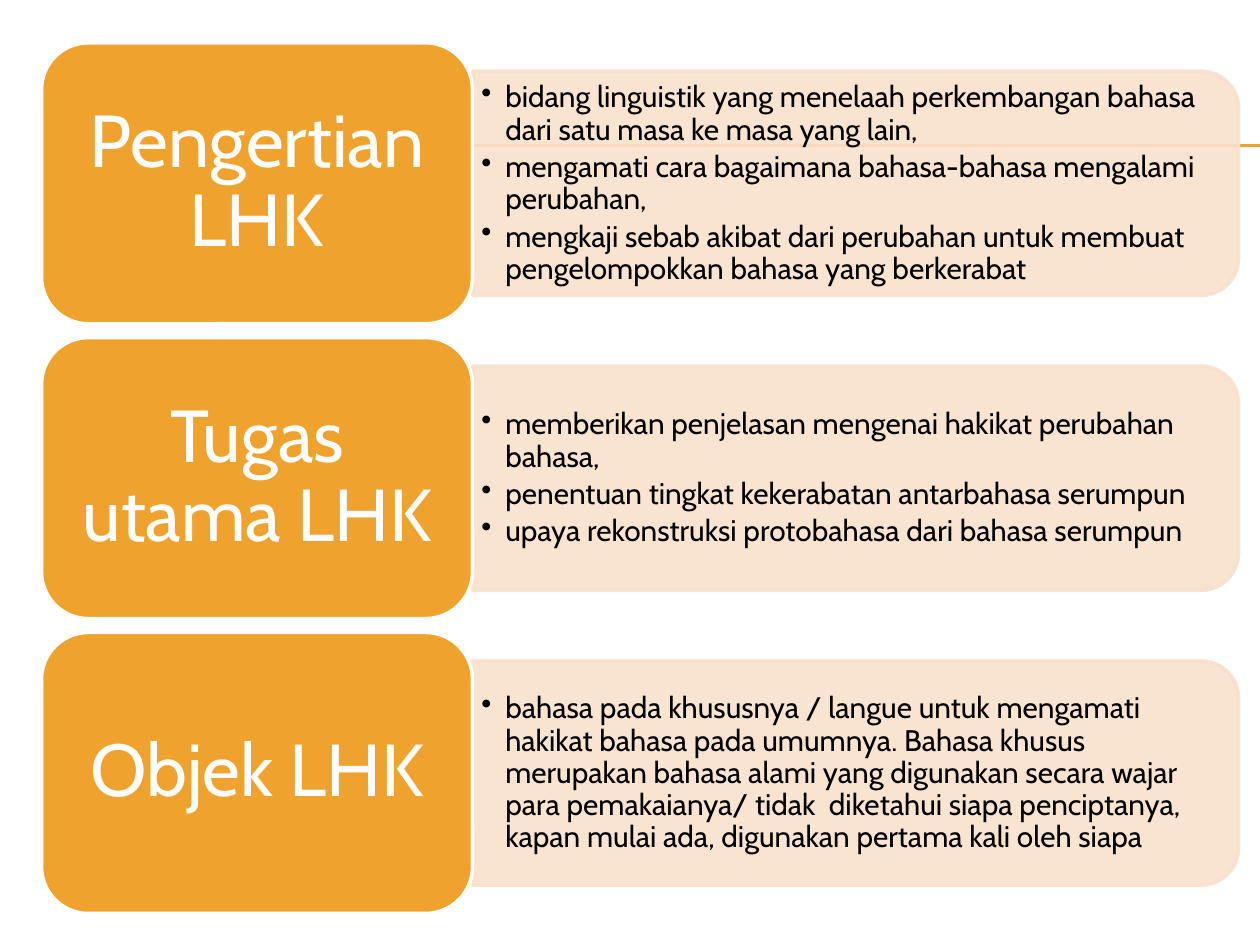
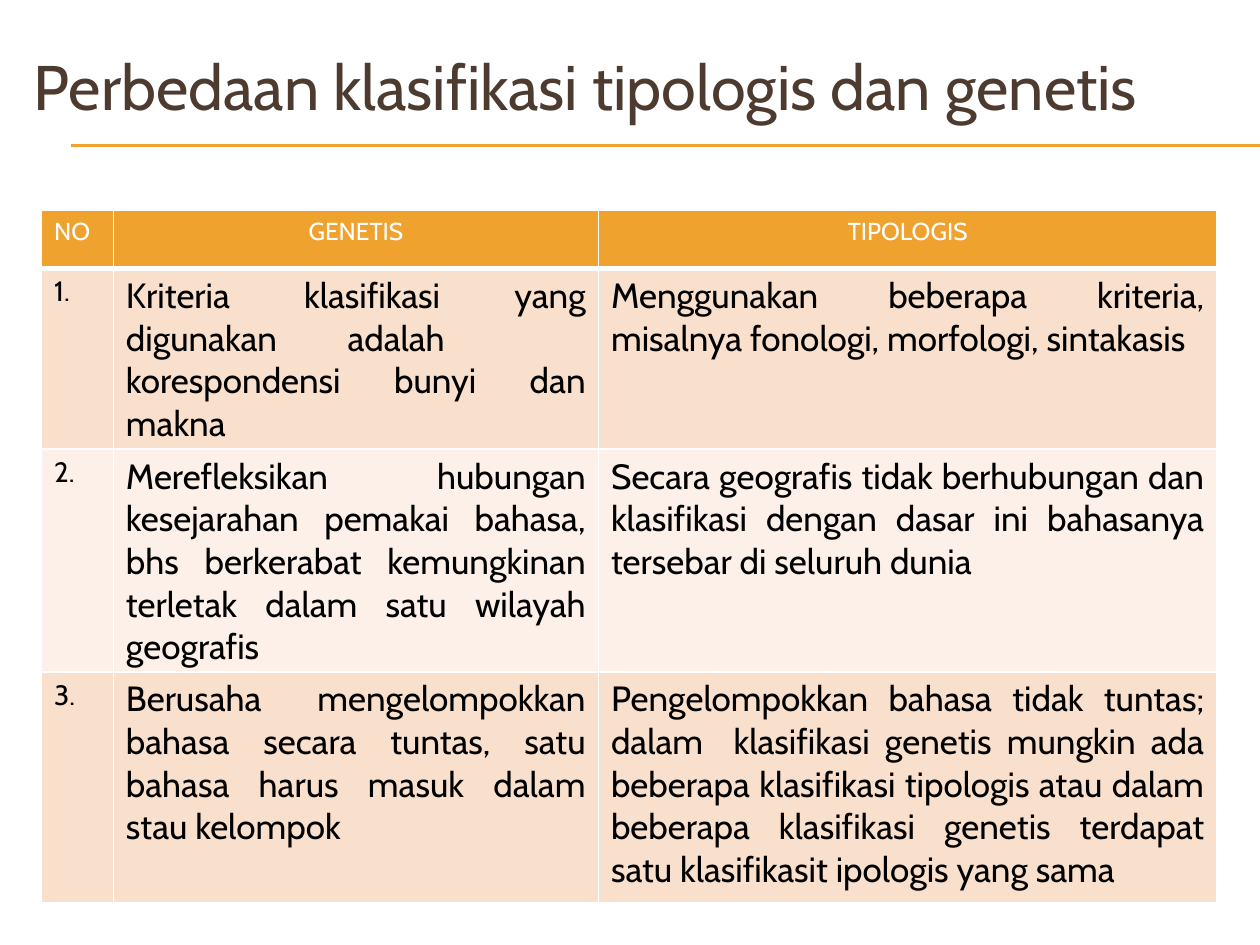
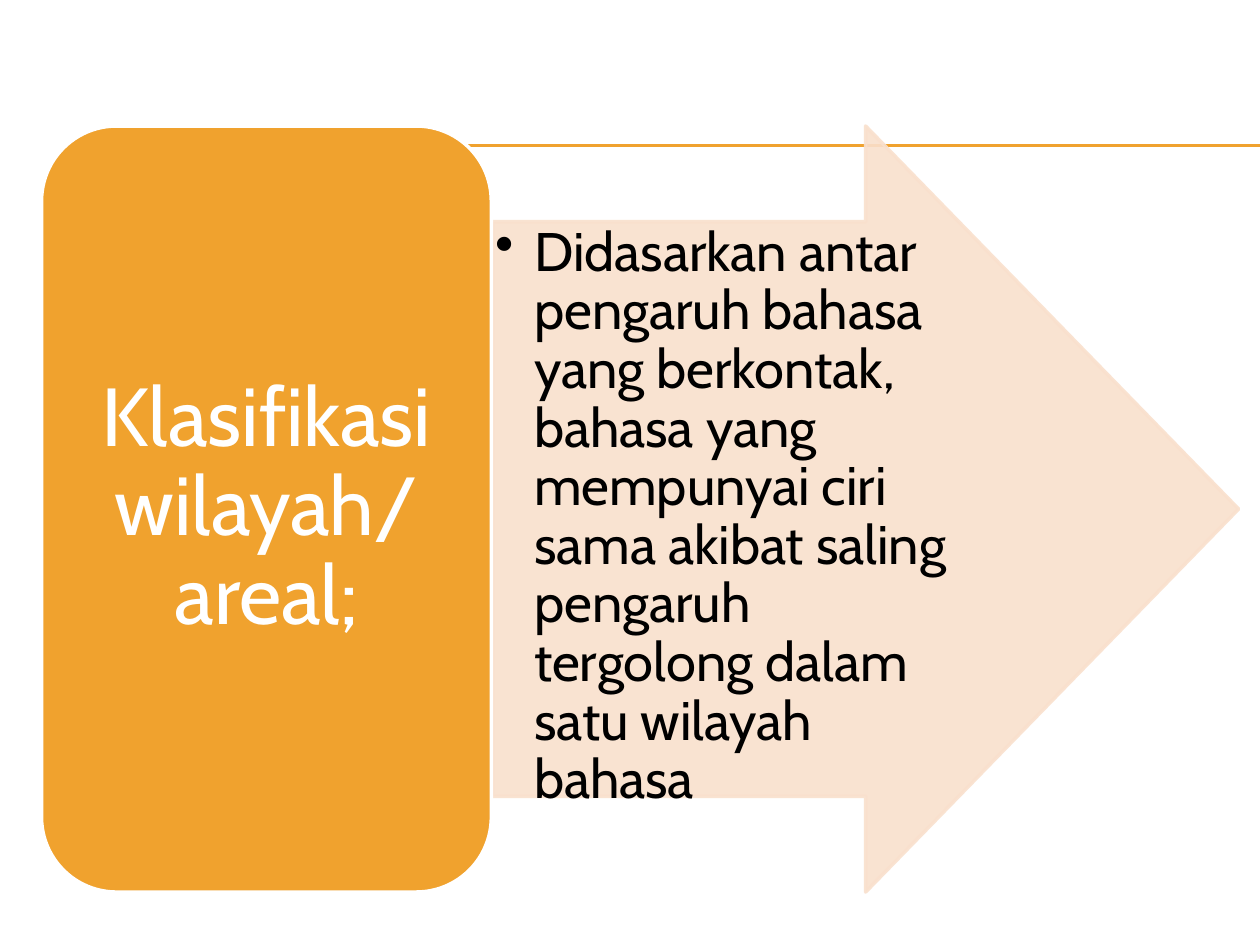
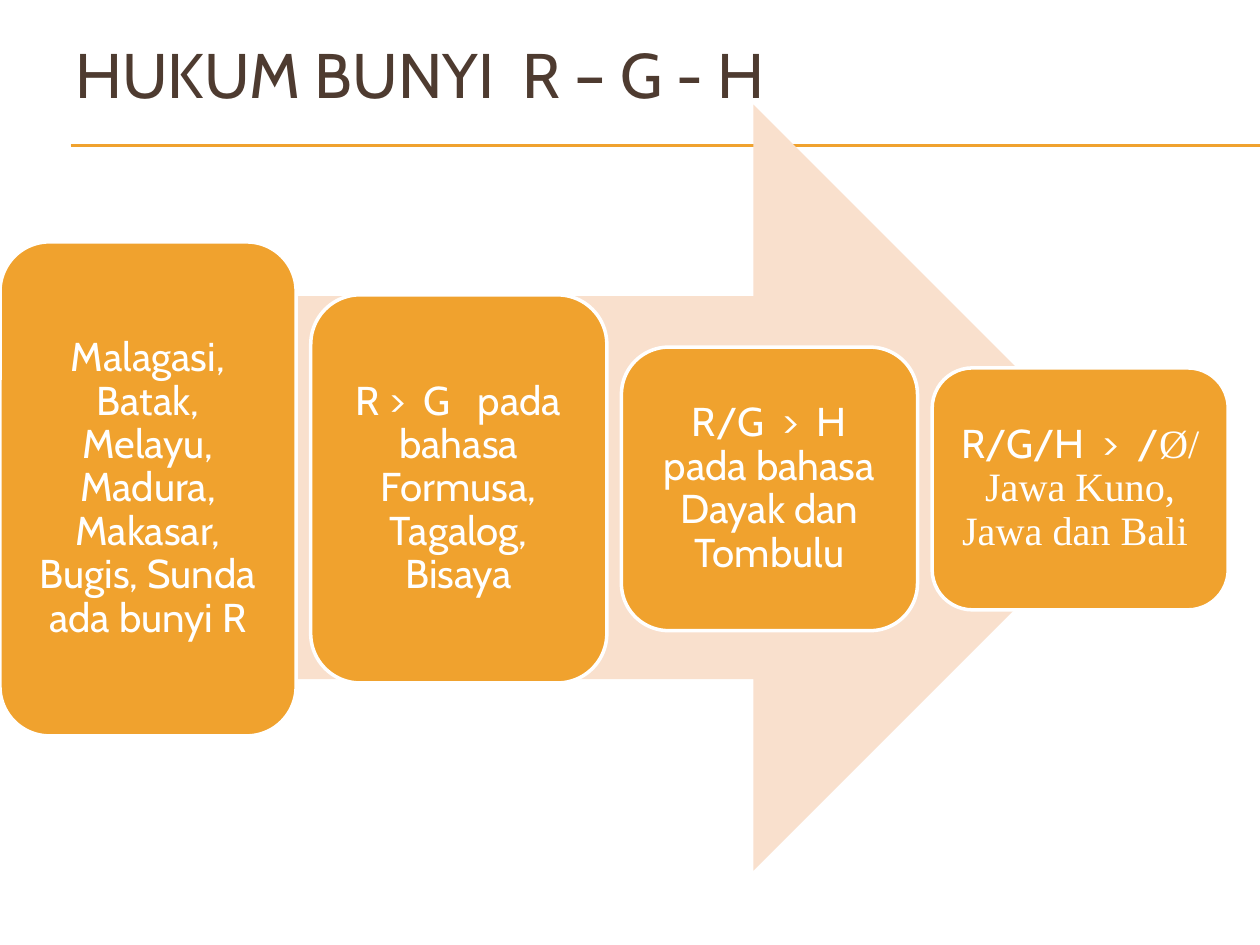
"""Build four slides on comparative historical linguistics (LHK)."""
from dataclasses import dataclass

from lxml import etree
from pptx import Presentation
from pptx.dml.color import RGBColor
from pptx.enum.shapes import MSO_CONNECTOR, MSO_SHAPE
from pptx.enum.text import MSO_ANCHOR, PP_ALIGN
from pptx.oxml.ns import qn
from pptx.util import Inches, Pt

ROUND = MSO_SHAPE.ROUNDED_RECTANGLE
TAB = MSO_SHAPE.ROUND_2_SAME_RECTANGLE
ARROW = MSO_SHAPE.RIGHT_ARROW
LINE = MSO_CONNECTOR.STRAIGHT
TOP, MID = MSO_ANCHOR.TOP, MSO_ANCHOR.MIDDLE
LEFT, CENTER, JUST = PP_ALIGN.LEFT, PP_ALIGN.CENTER, PP_ALIGN.JUSTIFY


@dataclass(frozen=True)
class Theme:
    gold: str = "F0A22E"
    peach: str = "F9E0CD"
    pale: str = "FCF0E8"
    brown: str = "4E3B30"
    white: str = "FFFFFF"
    black: str = "000000"
    font: str = "Cabin"
    serif: str = "Times New Roman"
    title: int = 36
    label: int = 42
    point: int = 17
    area: int = 47
    note: int = 31
    step: int = 23
    head: int = 14
    num: int = 16
    cell: int = 20


T = Theme()

TOPICS = [
    ("Pengertian LHK", [
        "bidang linguistik yang menelaah perkembangan bahasa dari satu masa ke masa yang lain,",
        "mengamati cara bagaimana bahasa-bahasa mengalami perubahan,",
        "mengkaji sebab akibat dari perubahan untuk membuat pengelompokkan bahasa yang berkerabat",
    ]),
    ("Tugas utama LHK", [
        "memberikan penjelasan mengenai hakikat perubahan bahasa,",
        "penentuan tingkat kekerabatan antarbahasa serumpun",
        "upaya rekonstruksi protobahasa dari bahasa serumpun",
    ]),
    ("Objek LHK", [
        "bahasa pada khususnya / langue untuk mengamati hakikat bahasa pada umumnya. "
        "Bahasa khusus merupakan bahasa alami yang digunakan secara wajar para pemakaianya/ "
        "tidak  diketahui siapa penciptanya, kapan mulai ada, digunakan pertama kali oleh siapa",
    ]),
]

TYPES = "Perbedaan klasifikasi tipologis dan genetis"
ROWS = [
    ("NO", "GENETIS", "TIPOLOGIS"),
    ("1.",
     "Kriteria klasifikasi yang digunakan adalah   korespondensi bunyi dan makna",
     "Menggunakan beberapa kriteria, misalnya fonologi, morfologi, sintakasis "),
    ("2.",
     "Merefleksikan hubungan kesejarahan pemakai bahasa, bhs berkerabat kemungkinan "
     "terletak dalam satu wilayah geografis",
     "Secara geografis tidak berhubungan dan klasifikasi dengan dasar ini bahasanya "
     "tersebar di seluruh dunia"),
    ("3.",
     "Berusaha mengelompokkan bahasa secara tuntas, satu bahasa harus masuk dalam stau kelompok",
     "Pengelompokkan bahasa tidak tuntas; dalam  klasifikasi genetis mungkin ada beberapa "
     "klasifikasi tipologis atau dalam beberapa klasifikasi genetis terdapat satu "
     "klasifikasit ipologis yang sama"),
]
WIDTHS = (0.57, 3.85, 4.91)
HEIGHTS = (0.46, 1.24, 1.72, 1.83)

AREA = "Klasifikasi wilayah/ areal;"
BASIS = ("Didasarkan antar pengaruh bahasa yang berkontak, bahasa yang mempunyai ciri sama "
         "akibat saling pengaruh tergolong dalam satu wilayah bahasa")

LAW = "HUKUM BUNYI  R – G - H"
STEPS = [
    (3.92, [("Malagasi, Batak, Melayu, Madura, Makasar, Bugis, Sunda ada bunyi R", T.font)]),
    (3.08, [("R >  G   pada bahasa Formusa, Tagalog, Bisaya", T.font)]),
    (2.25, [("R/G  >  H pada bahasa Dayak dan Tombulu", T.font)]),
    (1.92, [("R/G/H  >  /", T.font), ("Ø/ Jawa Kuno, Jawa dan Bali ", T.serif)]),
]


def rgb(code):
    return RGBColor.from_string(code)


def style(para, size, color, align=LEFT, font=T.font):
    para.alignment = align
    para.font.size = Pt(size)
    para.font.color.rgb = rgb(color)
    if font:
        para.font.name = font


def inset(frame, side, edge):
    frame.margin_left = frame.margin_right = Inches(side)
    frame.margin_top = frame.margin_bottom = Inches(edge)


def box(slide, place, anchor):
    frame = slide.shapes.add_textbox(*map(Inches, place)).text_frame
    frame.word_wrap = True
    frame.vertical_anchor = anchor
    return frame


def title(slide, place, text, anchor):
    frame = box(slide, place, anchor)
    frame.text = text
    style(frame.paragraphs[0], T.title, T.brown)


def bullets(slide, place, lines, size, hang, anchor, pads):
    frame = box(slide, place, anchor)
    inset(frame, *pads)
    frame.text = "\n".join(lines)
    for para in frame.paragraphs:
        props = para._p.get_or_add_pPr()
        props.set("marL", str(Inches(hang)))
        props.set("indent", str(-Inches(hang)))
        etree.SubElement(props, qn("a:buChar"), char="•")
        para.line_spacing = 0.9
        para.space_after = Pt(round(size * 0.15))
        style(para, size, T.black)


def shape(slide, kind, place, color, edge=None):
    item = slide.shapes.add_shape(kind, *map(Inches, place))
    item.shadow.inherit = False
    item.fill.solid()
    item.fill.fore_color.rgb = rgb(color)
    if edge:
        item.line.color.rgb = rgb(edge)
        item.line.width = Pt(2)
    else:
        item.line.fill.background()
    return item


def sheer(item):
    for tone in item._element.spPr.iter(qn("a:srgbClr")):
        etree.SubElement(tone, qn("a:alpha"), val="90000")


def card(slide, place, runs, size, side, edge):
    frame = shape(slide, ROUND, place, T.gold, T.white).text_frame
    frame.word_wrap = True
    frame.vertical_anchor = MID
    inset(frame, side, edge)
    para = frame.paragraphs[0]
    para.line_spacing = 0.9
    fonts = {font for _, font in runs}
    style(para, size, T.white, CENTER, fonts.pop() if len(fonts) == 1 else None)
    for text, font in runs:
        run = para.add_run()
        run.text = text
        if fonts:
            run.font.name = font


def page(deck):
    slide = deck.slides.add_slide(deck.slide_layouts[6])
    for y in (1.15, 1.16):
        rule = slide.shapes.add_connector(LINE, Inches(0.56), Inches(y), Inches(10), Inches(y))
        rule.line.color.rgb = rgb(T.gold)
        rule.line.width = Pt(0.75)
        etree.SubElement(rule._element.spPr, qn("a:effectLst"))
    return slide


def topics(slide):
    wide, tall, deep = 6.08, 2.23, 1.78
    for i, (name, lines) in enumerate(TOPICS):
        top = 0.34 + 2.34 * i
        mid = top + tall / 2
        tab = shape(slide, TAB, (3.75 + (wide - deep) / 2, mid - wide / 2, deep, wide),
                    T.peach, T.peach)
        tab.rotation = 90
        sheer(tab)
        bullets(slide, (3.75, mid - 0.8, 5.99, 1.61), lines, T.point, 0.19, MID, (0.07, 0.04))
        card(slide, (0.33, top, 3.42, tall), [(name, T.font)], T.label, 0.17, 0.09)


def border(cell, base):
    props = cell._tc.get_or_add_tcPr()
    for i, (side, width) in enumerate((("L", 1), ("R", 1), ("T", 1), ("B", base))):
        line = etree.Element(qn("a:ln" + side), w=str(Pt(width)))
        fill = etree.SubElement(line, qn("a:solidFill"))
        etree.SubElement(fill, qn("a:srgbClr"), val=T.white)
        props.insert(i, line)


def types(slide):
    title(slide, (0.17, 0.33, 9.58, 0.75), TYPES, TOP)
    grid = slide.shapes.add_table(len(ROWS), len(WIDTHS), Inches(0.33), Inches(1.67),
                                  Inches(sum(WIDTHS)), Inches(sum(HEIGHTS))).table
    for col, width in zip(grid.columns, WIDTHS):
        col.width = Inches(width)
    for r, texts in enumerate(ROWS):
        grid.rows[r].height = Inches(HEIGHTS[r])
        back = (T.pale, T.peach)[r % 2] if r else T.gold
        for c, text in enumerate(texts):
            cell = grid.cell(r, c)
            cell.text = text
            cell.fill.solid()
            cell.fill.fore_color.rgb = rgb(back)
            border(cell, 1 if r else 3)
            para = cell.text_frame.paragraphs[0]
            if r == 0:
                style(para, T.head, T.white, CENTER if c else LEFT)
                para.font.bold = False
            else:
                style(para, T.cell if c else T.num, T.black, JUST if c else LEFT)


def area(slide):
    arrow = shape(slide, ARROW, (3.91, 1, 5.92, 6.08), T.peach, T.peach)
    arrow.adjustments[0] = 0.75
    sheer(arrow)
    bullets(slide, (3.91, 1.76, 3.7, 4.56), [BASIS], T.note, 0.31, TOP, (0.02, 0.02))
    card(slide, (0.33, 1, 3.57, 6.08), [(AREA, T.font)], T.area, 0.2, 0.1)


def law(slide):
    title(slide, (0.5, 0, 9, 1.17), LAW, MID)
    shape(slide, ARROW, (0.73, 0.83, 8.29, 6.08), T.peach)
    for i, (tall, runs) in enumerate(STEPS):
        card(slide, (2.466 * i, 3.88 - tall / 2, 2.35, tall), runs, T.step, 0.1, 0.1)


def main():
    deck = Presentation()
    deck.slide_width, deck.slide_height = Inches(10), Inches(7.5)
    for draw in (topics, types, area, law):
        draw(page(deck))
    deck.save("out.pptx")


if __name__ == "__main__":
    main()
